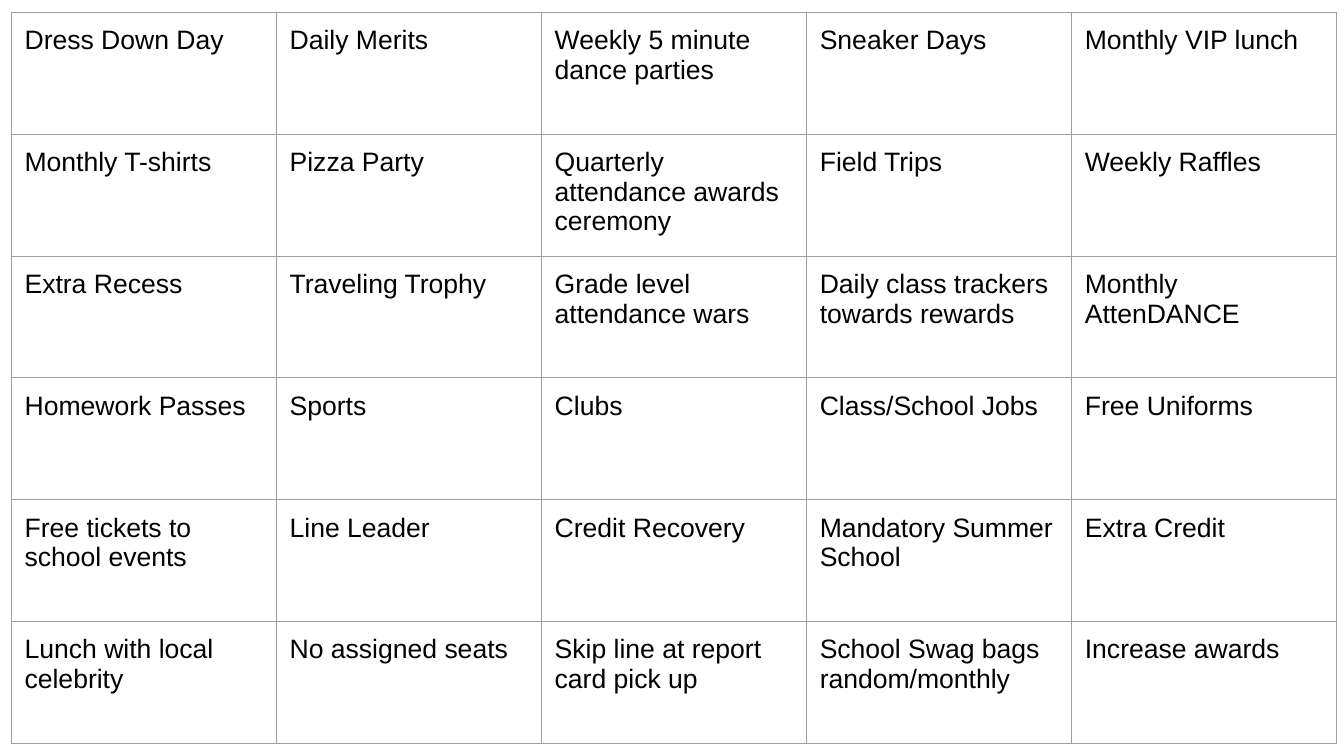
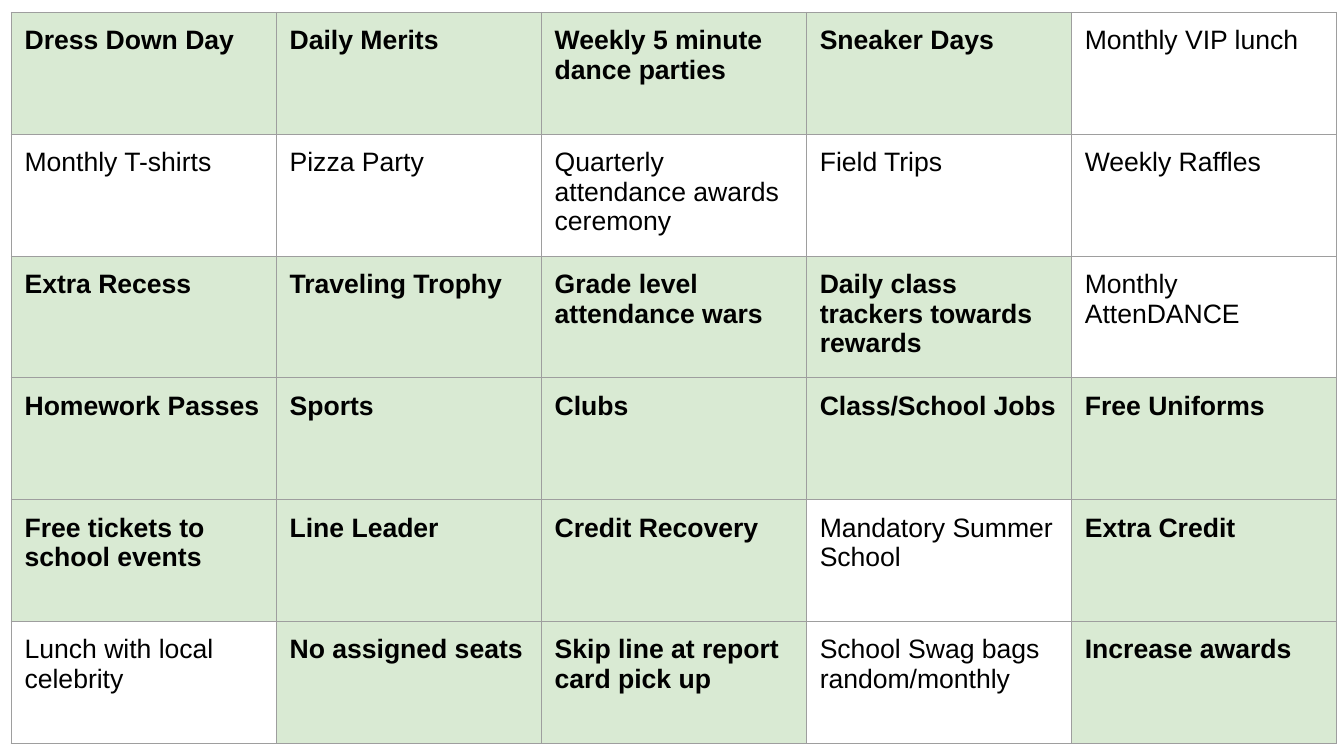
"""Two grids of attendance incentives: all ideas, then the same ideas with the chosen ones highlighted."""
from dataclasses import dataclass

from lxml import etree
from pptx import Presentation
from pptx.dml.color import RGBColor
from pptx.enum.text import MSO_ANCHOR
from pptx.oxml.ns import qn
from pptx.presentation import Presentation as Deck
from pptx.table import _Cell
from pptx.util import Cm, Pt

TOP = MSO_ANCHOR.TOP
COLORS = {"text": "000000", "border": "9E9E9E", "chosen": "D9EAD3", "plain": "FFFFFF"}
FONT = "Arial"
TEXT_SIZE = Pt(19)
BORDER_WIDTH = Pt(0.75)
BORDER_SIDES = ("a:lnL", "a:lnR", "a:lnT", "a:lnB")
LEFT, TOP_EDGE = Cm(0.28), Cm(0.31)
COLUMN_WIDTH, ROW_HEIGHT = Cm(6.68), Cm(3.07)
CELL_MARGIN = Cm(0.34)
BLANK_LAYOUT = 6


@dataclass(frozen=True)
class Incentive:
    """An attendance incentive and whether it is among the chosen ones."""
    name: str
    chosen: bool = True


INCENTIVES = [
    [Incentive("Dress Down Day"), Incentive("Daily Merits"),
     Incentive("Weekly 5 minute dance parties"), Incentive("Sneaker Days"),
     Incentive("Monthly VIP lunch", False)],
    [Incentive("Monthly T-shirts", False), Incentive("Pizza Party", False),
     Incentive("Quarterly attendance awards ceremony", False),
     Incentive("Field Trips", False), Incentive("Weekly Raffles", False)],
    [Incentive("Extra Recess"), Incentive("Traveling Trophy"),
     Incentive("Grade level attendance wars"),
     Incentive("Daily class trackers towards rewards"),
     Incentive("Monthly AttenDANCE", False)],
    [Incentive("Homework Passes"), Incentive("Sports"), Incentive("Clubs"),
     Incentive("Class/School Jobs"), Incentive("Free Uniforms")],
    [Incentive("Free tickets to school events"), Incentive("Line Leader"),
     Incentive("Credit Recovery"), Incentive("Mandatory Summer School", False),
     Incentive("Extra Credit")],
    [Incentive("Lunch with local celebrity", False), Incentive("No assigned seats"),
     Incentive("Skip line at report card pick up"),
     Incentive("School Swag bags random/monthly", False), Incentive("Increase awards")],
]


def add_borders(cell: _Cell) -> None:
    """Outline all four sides of a cell, ahead of its fill element."""
    properties = cell._tc.get_or_add_tcPr()
    for position, side in enumerate(BORDER_SIDES):
        line = etree.Element(qn(side), w=str(BORDER_WIDTH))
        fill = etree.SubElement(line, qn("a:solidFill"))
        etree.SubElement(fill, qn("a:srgbClr"), val=COLORS["border"])
        properties.insert(position, line)


def fill_cell(cell: _Cell, incentive: Incentive, highlight: bool) -> None:
    """Write one incentive, marking it when highlighting is on."""
    cell.margin_left = cell.margin_right = CELL_MARGIN
    cell.margin_top = cell.margin_bottom = CELL_MARGIN
    cell.vertical_anchor = TOP
    if highlight:
        cell.fill.solid()
        color = COLORS["chosen" if incentive.chosen else "plain"]
        cell.fill.fore_color.rgb = RGBColor.from_string(color)
    else:
        cell.fill.background()
    cell.text = incentive.name
    font = cell.text_frame.paragraphs[0].font
    font.name, font.size = FONT, TEXT_SIZE
    font.bold = highlight and incentive.chosen
    font.color.rgb = RGBColor.from_string(COLORS["text"])
    add_borders(cell)


def add_incentive_slide(deck: Deck, highlight: bool) -> None:
    """Add a slide holding the full incentive grid."""
    slide = deck.slides.add_slide(deck.slide_layouts[BLANK_LAYOUT])
    rows, columns = len(INCENTIVES), len(INCENTIVES[0])
    grid = slide.shapes.add_table(rows, columns, LEFT, TOP_EDGE,
                                  COLUMN_WIDTH * columns, ROW_HEIGHT * rows).table
    grid.first_row = grid.horz_banding = False
    for column in grid.columns:
        column.width = COLUMN_WIDTH
    for row, incentives in zip(grid.rows, INCENTIVES):
        row.height = ROW_HEIGHT
        for cell, incentive in zip(row.cells, incentives):
            fill_cell(cell, incentive, highlight)


def main() -> None:
    """Build and save the deck."""
    deck = Presentation()
    deck.slide_width, deck.slide_height = Cm(33.87), Cm(19.05)
    for highlight in (False, True):
        add_incentive_slide(deck, highlight)
    deck.save("out.pptx")


if __name__ == "__main__":
    main()
